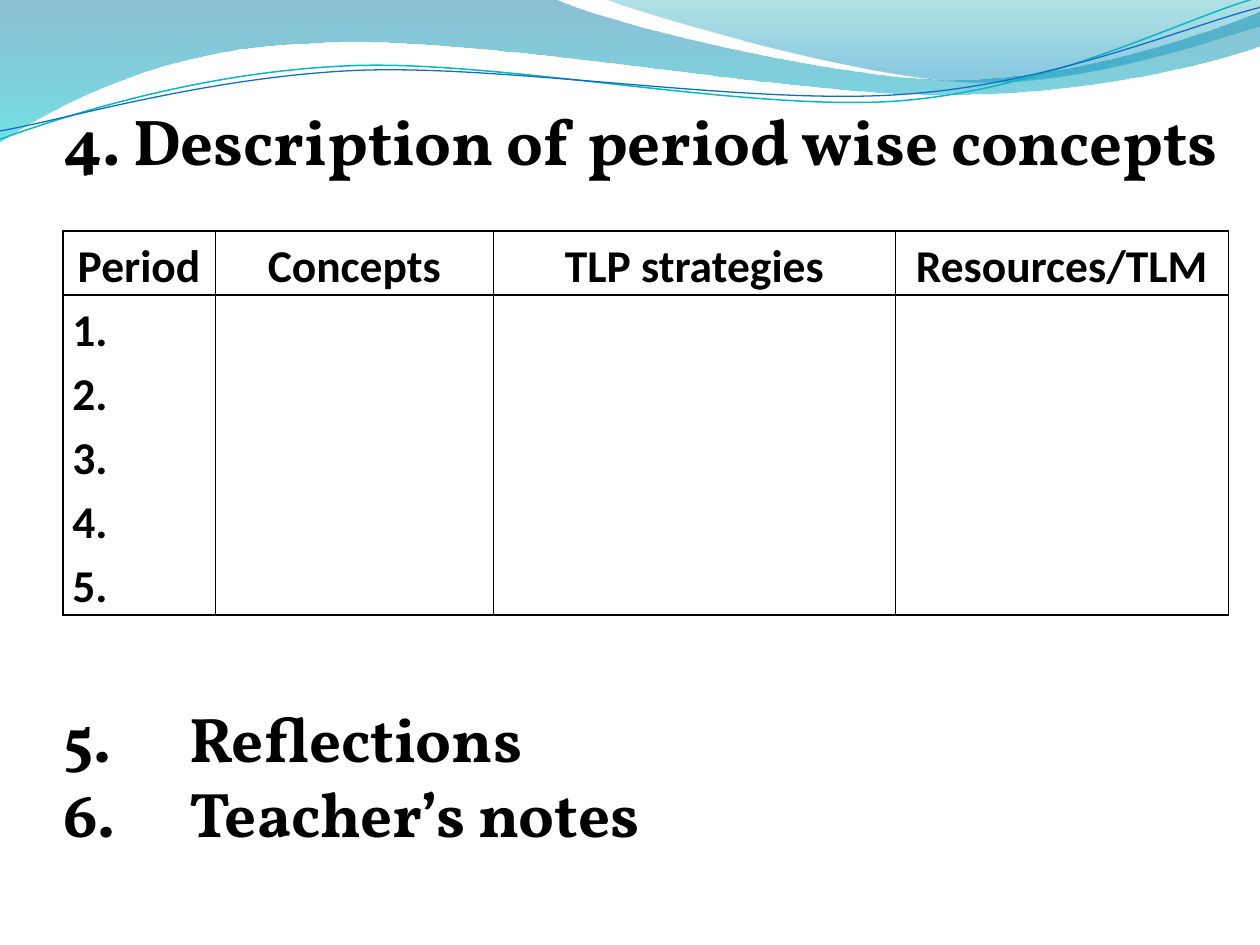
from dataclasses import dataclass
from typing import Any, Optional

from lxml import etree
from pptx import Presentation
from pptx import util as u
from pptx.dml import color as colour
from pptx.enum import text as t
from pptx.oxml import ns

COLOURS = {
    "ink": "000000",
    "deep blue": "0074A1",
    "aqua": "00C6CF",
    "teal": "00A1A9",
    "sky blue": "008BBF",
    "teal line": "0AB8BF",
    "blue line": "0F6FC6",
}
TILT = 357.3
HANGING = u.Cm(2.54)
BODY_INSETS = {"margin_left": 0, "margin_right": 0, "margin_top": u.Cm(0.13), "margin_bottom": 0}
CELL_FORMAT = {
    "margin_left": u.Cm(0.19), "margin_right": u.Cm(0.19),
    "margin_top": 0, "margin_bottom": 0,
}
HEADINGS = ["Period", "Concepts", "TLP strategies", "Resources/TLM"]
COLUMN_WIDTHS = [3.07, 5.61, 8.1, 6.71]
ROW_HEIGHTS = [0.46, 6.12]

Point = tuple[float, float]


@dataclass
class Stop:
    position: float
    colour: str
    opacity: int


@dataclass
class Wave:
    start: Point
    segments: list[list[Point]]
    stops: Optional[list[Stop]] = None
    line: Optional[str] = None
    weight: float = 0


WAVES = [
    Wave(
        (0, 0),
        [
            [(11.18, -0.03)],
            [(12.09, 0.43), (16.87, 1.6), (19.25, 1.6)],
            [(21.67, 1.6), (24.33, 0.66), (25.4, 0.23)],
            [(25.43, 0.91)],
            [(24.97, 1.12), (22.1, 1.93), (18.95, 1.91)],
            [(15.8, 1.91), (9.7, 0.71), (6.53, 0.86)],
            [(3.28, 0.91), (1.17, 2.11), (-0.03, 2.87)],
        ],
        stops=[Stop(0, "deep blue", 45), Stop(1, "aqua", 55)],
    ),
    Wave(
        (12.17, -0.03),
        [
            [(12.93, 0.28), (17.32, 1.57), (19.53, 1.65)],
            [(21.74, 1.75), (24.41, 0.81), (25.4, 0.53)],
            [(25.4, 0)],
        ],
        stops=[Stop(0, "teal", 30), Stop(0.8, "sky blue", 45)],
    ),
    Wave(
        (-0.05, 2.21),
        [
            [(1.19, 1.82), (4.02, 1.04), (7.05, 1.06)],
            [(10.05, 1.07), (15.02, 2.37), (18.08, 2.29)],
            [(21.13, 2.2), (23.86, 0.91), (25.41, 0.55)],
        ],
        line="teal line", weight=0.85,
    ),
    Wave(
        (-0.04, 2.04),
        [
            [(1.16, 1.9), (4.17, 1.15), (7.2, 1.16)],
            [(10.25, 1.18), (15.13, 2.25), (18.19, 2.16)],
            [(21.21, 2.1), (23.93, 1.06), (25.45, 0.75)],
        ],
        line="blue line", weight=0.75,
    ),
]


def rgb(name: str) -> colour.RGBColor:
    return colour.RGBColor.from_string(COLOURS[name])


def apply(target: Any, values: dict[str, Any]) -> None:
    for name, value in values.items():
        setattr(target, name, value)


def bend(shape: Any, segments: list[list[Point]]) -> None:
    steps = iter(list(shape._element.iter(ns.qn("a:lnTo"))))
    for segment in segments:
        moves = [next(steps) for _ in segment]
        if len(moves) == 3:
            curve = etree.Element(ns.qn("a:cubicBezTo"))
            moves[0].addprevious(curve)
            for move in moves:
                curve.append(move[0])
                move.getparent().remove(move)


def draw_wave(page: Any, wave: Wave) -> Any:
    builder = page.shapes.build_freeform(u.Cm(wave.start[0]), u.Cm(wave.start[1]))
    builder.add_line_segments(
        [(u.Cm(x), u.Cm(y)) for segment in wave.segments for x, y in segment],
        close=wave.stops is not None,
    )
    shape = builder.convert_to_shape()
    bend(shape, wave.segments)
    shape.shadow.inherit = False
    if wave.stops:
        shape.line.fill.background()
        shape.fill.gradient()
        shape.fill.gradient_angle = 270
        for target, stop in zip(shape.fill.gradient_stops, wave.stops):
            target.position = stop.position
            target.color.rgb = rgb(stop.colour)
        tones = shape._element.spPr.iter(ns.qn("a:srgbClr"))
        for tone, stop in zip(tones, wave.stops):
            etree.SubElement(tone, ns.qn("a:alpha"), val=str(stop.opacity * 1000))
    else:
        shape.rotation = TILT
        shape.fill.background()
        shape.line.color.rgb = rgb(wave.line)
        shape.line.width = u.Pt(wave.weight)
    return shape


def write(frame: Any, lines: list[str], font: str, size: float, layout: dict[str, Any]) -> None:
    for index, line in enumerate(lines):
        para = frame.paragraphs[0] if index == 0 else frame.add_paragraph()
        apply(para, layout)
        span = para.add_run()
        span.text = line
        apply(span.font, {"name": font, "size": u.Pt(size), "bold": True})
        span.font.color.rgb = rgb("ink")


def fill_placeholder(box: Any, place: tuple, lines: list[str], size: float) -> None:
    apply(box, dict(zip(("left", "top", "width", "height"), map(u.Cm, place))))
    apply(box.text_frame, {
        **BODY_INSETS,
        "word_wrap": True,
        "auto_size": t.MSO_AUTO_SIZE.NONE,
        "vertical_anchor": t.MSO_ANCHOR.BOTTOM,
    })
    layout = {"alignment": t.PP_ALIGN.LEFT, "space_before": u.Pt(0)}
    write(box.text_frame, lines, "Vollkorn", size, layout)
    for para in box.text_frame.paragraphs:
        properties = para._p.get_or_add_pPr()
        properties.set("marL", str(HANGING))
        properties.set("indent", str(-HANGING))


def number_from(box: Any, first: int) -> None:
    for para in box.text_frame.paragraphs:
        etree.SubElement(
            para._p.get_or_add_pPr(), ns.qn("a:buAutoNum"),
            type="arabicPeriod", startAt=str(first),
        )


def frame_cell(cell: Any) -> None:
    apply(cell, CELL_FORMAT)
    properties = cell._tc.get_or_add_tcPr()
    for side in ("lnL", "lnR", "lnT", "lnB"):
        border = etree.SubElement(properties, ns.qn(f"a:{side}"), w=str(u.Pt(1)))
        solid = etree.SubElement(border, ns.qn("a:solidFill"))
        etree.SubElement(solid, ns.qn("a:srgbClr"), val=COLOURS["ink"])
    cell.fill.background()


def draw_table(page: Any) -> None:
    frame = page.shapes.add_table(
        len(ROW_HEIGHTS), len(HEADINGS), u.Cm(1.27), u.Cm(4.66),
        u.Cm(sum(COLUMN_WIDTHS)), u.Cm(sum(ROW_HEIGHTS)),
    )
    table = frame.table
    apply(table, {"first_row": False, "horz_banding": False})
    for column, width in zip(table.columns, COLUMN_WIDTHS):
        column.width = u.Cm(width)
    for row, height in zip(table.rows, ROW_HEIGHTS):
        row.height = u.Cm(height)
    frame.height = u.Cm(7.52)
    for cell in table.iter_cells():
        frame_cell(cell)
    for index, heading in enumerate(HEADINGS):
        write(table.cell(0, index).text_frame, [heading], "Calibri", 26,
              {"alignment": t.PP_ALIGN.CENTER, "line_spacing": 1.15})
    periods = [f"{number}." for number in range(1, 6)]
    write(table.cell(1, 0).text_frame, periods, "Calibri", 26, {"line_spacing": 1.15})


def main() -> None:
    deck = Presentation()
    apply(deck, {"slide_width": u.Cm(25.4), "slide_height": u.Cm(19.05)})
    page = deck.slides.add_slide(deck.slide_layouts[1])
    title, body = page.placeholders
    for wave in WAVES:
        deck.slide_master.shapes._spTree.append(draw_wave(page, wave)._element)
    fill_placeholder(title, (1.27, 2.13, 24.13, 1.47),
                     ["4. Description of period wise concepts"], 37)
    draw_table(page)
    page.shapes._spTree.append(body._element)
    fill_placeholder(body, (1.27, 13.76, 23.06, 3.38), ["Reflections", "Teacher’s notes"], 36)
    number_from(body, 5)
    deck.save("out.pptx")


if __name__ == "__main__":
    main()
